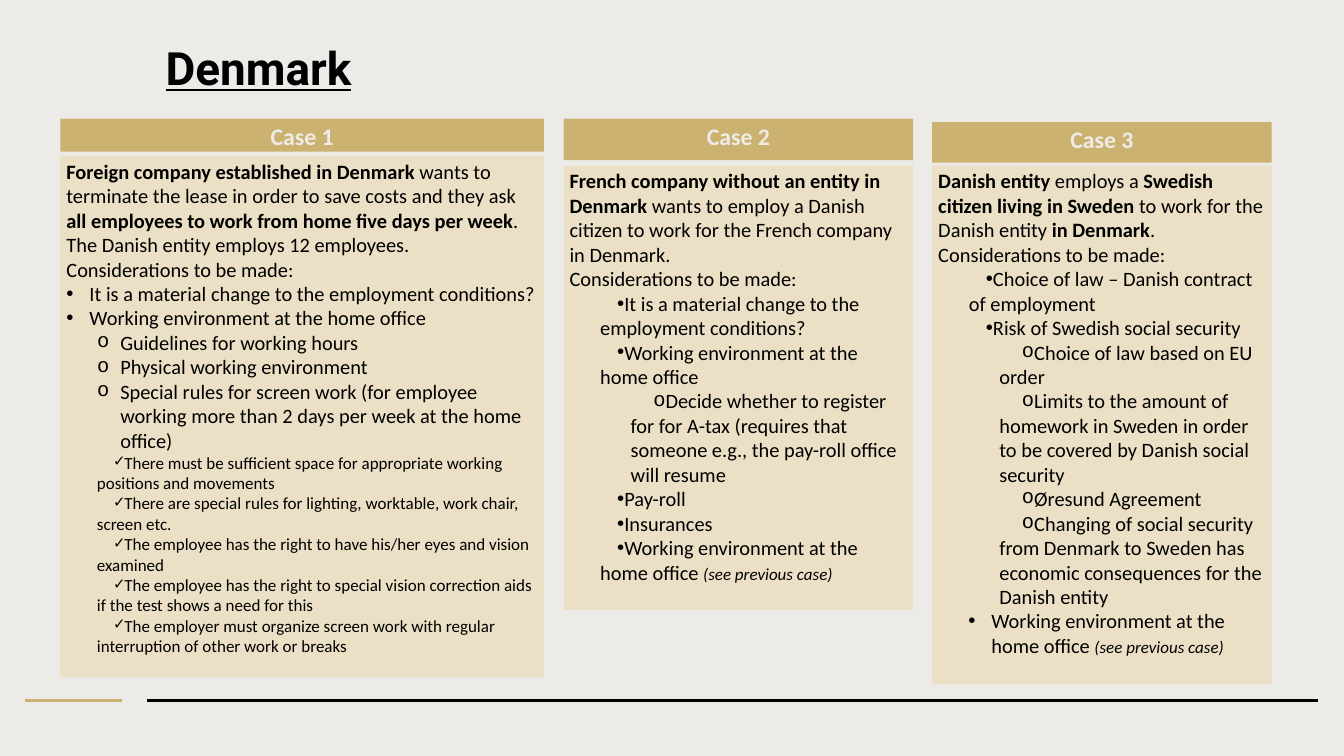
from dataclasses import dataclass

from lxml.etree import SubElement
from pptx import Presentation
from pptx.dml.color import RGBColor
from pptx.enum.shapes import MSO_CONNECTOR, MSO_SHAPE
from pptx.enum.text import MSO_ANCHOR, MSO_AUTO_SIZE, PP_ALIGN
from pptx.oxml.ns import qn
from pptx.util import Cm, Pt


@dataclass(frozen=True)
class Theme:
    back: str = "EDEBE8"
    gold: str = "CCB271"
    sand: str = "EBE0C6"
    pale: str = "EEEBE8"
    ink: str = "000000"
    font: str = "Calibri"
    title_font: str = "Roboto"
    title: int = 54
    head: int = 28
    body: int = 24
    note: int = 20
    rule: float = 4.12


THEME = Theme()

# Kind of list item: level, left margin and first-line indent in cm, bullet, bullet font
ITEMS = {
    "dot": (0, 0.96, -0.96, "•", "Arial"),
    "ring": (1, 2.24, -0.96, "o", "Courier New"),
    "tick": (1, 1.27, 0.71, "✓", None),
    "sub": (1, 1.27, 0.71, "•", "Arial"),
    "deep": (2, 2.54, 0.94, "o", "Courier New"),
    "hang": (2, 2.21, -0.96, "•", "Arial"),
}

# Asterisks enclose bold words, underscores enclose a small italic note
CASE_1 = [
    ("", "*Foreign company established in Denmark *wants to terminate the lease in order to save "
         "costs and they ask *all employees to work from home five days per week*. "
         "The Danish entity employs 12 employees."),
    ("", "Considerations to be made:"),
    ("dot", "It is a material change to the employment conditions?"),
    ("dot", "Working environment at the home office"),
    ("ring", "Guidelines for working hours"),
    ("ring", "Physical working environment"),
    ("ring", "Special rules for screen work (for employee working more than 2 days per week "
             "at the home office)"),
    ("tick", "There must be sufficient space for appropriate working positions and movements"),
    ("tick", "There are special rules for lighting, worktable, work chair, screen etc."),
    ("tick", "The employee has the right to have his/her eyes and vision examined"),
    ("tick", "The employee has the right to special vision correction aids if the test shows "
             "a need for this"),
    ("tick", "The employer must organize screen work with regular interruption of other work "
             "or breaks"),
]
CASE_2 = [
    ("", "*French company without an entity in Denmark *wants to employ a Danish citizen "
         "to work for the French company in Denmark."),
    ("", "Considerations to be made:"),
    ("sub", "It is a material change to the employment conditions?"),
    ("sub", "Working environment at the home office"),
    ("deep", "Decide whether to register for for A-tax (requires that someone e.g., "
             "the pay-roll office will resume"),
    ("sub", "Pay-roll"),
    ("sub", "Insurances"),
    ("sub", "Working environment at the home office _(see previous case)_"),
]
CASE_3 = [
    ("", "*Danish entity* employs a *Swedish citizen living in Sweden *to work for "
         "the Danish entity *in Denmark*."),
    ("", "Considerations to be made:"),
    ("sub", "Choice of law – Danish contract of employment"),
    ("sub", "Risk of Swedish social security"),
    ("deep", "Choice of law based on EU order"),
    ("deep", "Limits to the amount of homework in Sweden in order to be covered by "
             "Danish social security"),
    ("deep", "Øresund Agreement"),
    ("deep", "Changing of social security from Denmark to Sweden has economic consequences "
             "for the Danish entity"),
    ("hang", "Working environment at the home office _(see previous case)_"),
]

# Left, width, then top and height of the head and of the body, in cm
CASES = [
    (2.51, 20.09, (4.93, 1.37), (6.48, 21.67), CASE_1),
    (23.42, 14.53, (4.93, 1.73), (6.88, 18.47), CASE_2),
    (38.74, 14.1, (5.08, 1.68), (6.88, 21.54), CASE_3),
]


def write(para, text, size=THEME.body, color=THEME.ink, font=THEME.font,
          bold=False, line=False, align=PP_ALIGN.LEFT):
    """Fill a paragraph, turning *bold* and _note_ marks into formatted runs."""
    para.alignment = align
    mark = "_" if "_" in text else "*"
    for i, part in enumerate(text.split(mark)):
        if not part:
            continue
        marked = i % 2 == 1
        note = marked and mark == "_"
        run = para.add_run()
        run.text = part
        face = run.font
        face.name = font
        face.size = Pt(THEME.note if note else size)
        face.color.rgb = RGBColor.from_string(color)
        face.bold = bold or (marked and not note)
        face.italic = note
        face.underline = line


def mark_item(para, kind):
    """Give a paragraph the indent and bullet of its kind."""
    level, left, first, sign, font = ITEMS[kind]
    para.level = level
    props = para._p.get_or_add_pPr()
    props.set("marL", str(Cm(left)))
    props.set("indent", str(Cm(first)))
    if font:
        SubElement(props, qn("a:buFont"), typeface=font)
    SubElement(props, qn("a:buChar"), char=sign)


class Deck:
    def __init__(self, theme, width, height):
        self.theme = theme
        self.prs = Presentation()
        self.prs.slide_width, self.prs.slide_height = Cm(width), Cm(height)
        self.slide = None

    def add_slide(self):
        self.slide = self.prs.slides.add_slide(self.prs.slide_layouts[5])
        fill = self.slide.background.fill
        fill.solid()
        fill.fore_color.rgb = RGBColor.from_string(self.theme.back)

    def title(self, text, left, top, width, height):
        shape = self.slide.shapes.title
        shape.left, shape.top = Cm(left), Cm(top)
        shape.width, shape.height = Cm(width), Cm(height)
        frame = shape.text_frame
        frame.auto_size = MSO_AUTO_SIZE.NONE
        frame.vertical_anchor = MSO_ANCHOR.MIDDLE
        para = frame.paragraphs[0]
        para.line_spacing = 0.9
        write(para, text, size=self.theme.title, font=self.theme.title_font,
              bold=True, line=True)

    def rule(self, start, end, y, color):
        line = self.slide.shapes.add_connector(
            MSO_CONNECTOR.STRAIGHT, Cm(start), Cm(y), Cm(end), Cm(y))
        line.line.color.rgb = RGBColor.from_string(color)
        line.line.width = Pt(self.theme.rule)
        SubElement(line._element.spPr, qn("a:effectLst"))

    def box(self, left, top, width, height, color):
        """Add a plain filled box and return its text frame."""
        shape = self.slide.shapes.add_shape(
            MSO_SHAPE.RECTANGLE, Cm(left), Cm(top), Cm(width), Cm(height))
        shape.shadow.inherit = False
        shape.fill.solid()
        shape.fill.fore_color.rgb = RGBColor.from_string(color)
        shape.line.fill.background()
        frame = shape.text_frame
        frame.word_wrap = True
        frame.vertical_anchor = MSO_ANCHOR.TOP
        return frame

    def case(self, name, left, width, head, body, items):
        theme = self.theme
        frame = self.box(left, body[0], width, body[1], theme.sand)
        for i, (kind, text) in enumerate(items):
            para = frame.add_paragraph() if i else frame.paragraphs[0]
            write(para, text, size=theme.note if kind == "tick" else theme.body)
            if kind:
                mark_item(para, kind)
        frame = self.box(left, head[0], width, head[1], theme.gold)
        write(frame.paragraphs[0], name, size=theme.head, color=theme.pale,
              bold=True, align=PP_ALIGN.CENTER)


def main():
    deck = Deck(THEME, 55.85, 31.42)
    deck.add_slide()
    deck.rule(1.04, 5.05, 29.11, THEME.gold)
    deck.rule(6.1, 54.79, 29.11, THEME.ink)
    deck.title("Denmark", 6.63, 1.24, 43.69, 3.4)
    for num, case in enumerate(CASES, 1):
        deck.case(f"Case {num}", *case)
    deck.prs.save("out.pptx")


if __name__ == "__main__":
    main()
